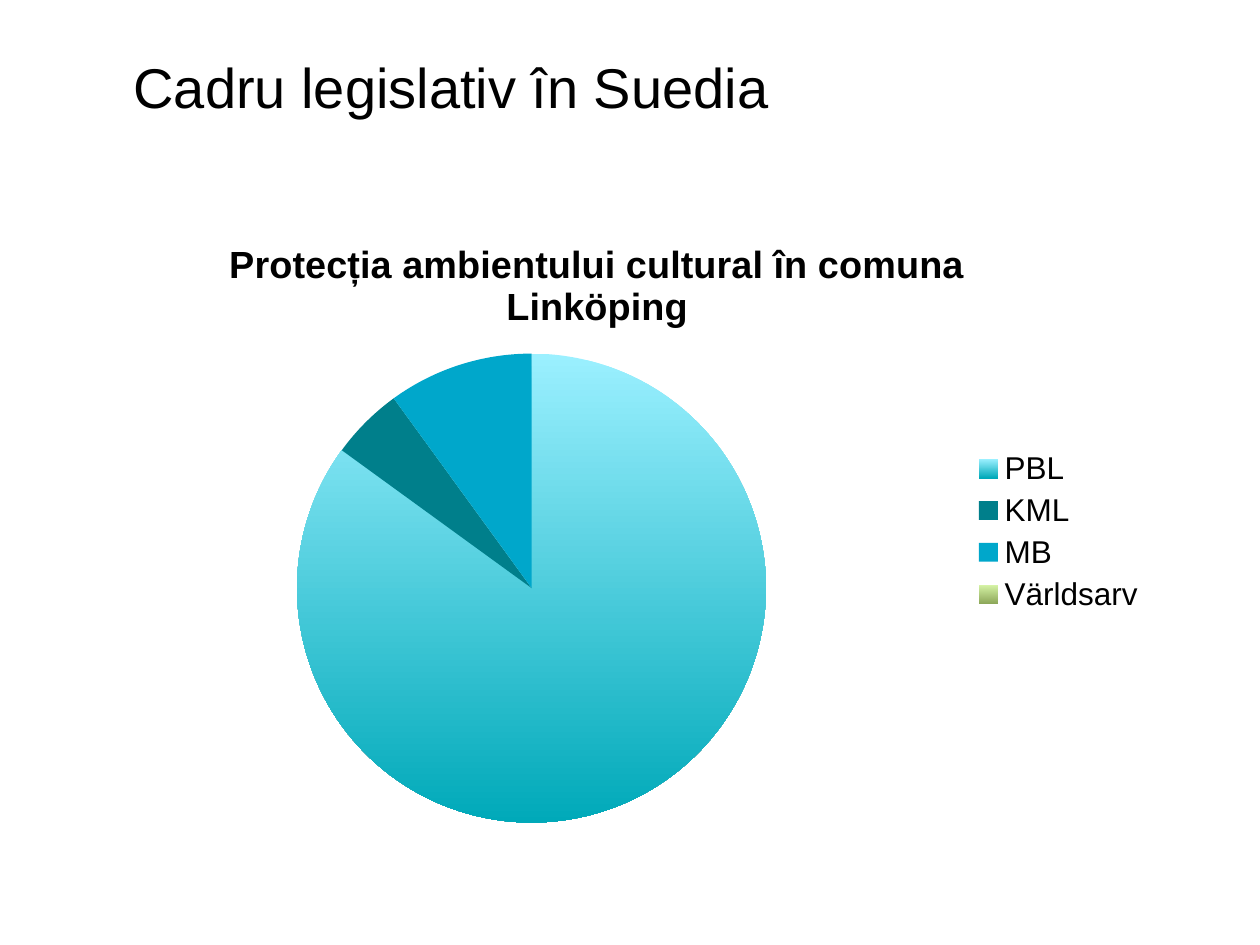
from lxml import etree
from pptx import Presentation
from pptx.chart.data import CategoryChartData as Data
from pptx.dml.color import RGBColor as RGB
from pptx.enum.chart import XL_CHART_TYPE as Kind, XL_LEGEND_POSITION as Side
from pptx.enum.text import MSO_ANCHOR as Anchor, PP_ALIGN as Align
from pptx.oxml.ns import qn
from pptx.util import Inches, Pt

BLACK = RGB(0, 0, 0)
ICE = RGB(0x9B, 0xF0, 0xFF)
AQUA = RGB(0x00, 0xA9, 0xB9)
TEAL = RGB(0x00, 0x7F, 0x8B)
BLUE = RGB(0x00, 0xA7, 0xCB)
LIME = RGB(0xD8, 0xF5, 0xA8)
MOSS = RGB(0x8D, 0xA8, 0x5A)


class Deck:
    face = "Arial"

    def __init__(self):
        self.prs = Presentation()
        self.prs.slide_width, self.prs.slide_height = Inches(10), Inches(7.5)
        self.slide = self.prs.slides.add_slide(self.prs.slide_layouts[5])

    def area(self, x, y, w, h):
        """Turn shares of the slide into lengths."""
        wide, high = self.prs.slide_width, self.prs.slide_height
        return int(x * wide), int(y * high), int(w * wide), int(h * high)

    def style(self, font, size, bold=False):
        font.name, font.size, font.bold = self.face, Pt(size), bold
        font.color.rgb = BLACK

    def title(self, text, box, size):
        shape = self.slide.shapes.title
        shape.left, shape.top, shape.width, shape.height = self.area(*box)
        frame = shape.text_frame
        frame.text = text
        frame.word_wrap, frame.vertical_anchor = True, Anchor.TOP
        frame.margin_left = frame.margin_right = 0
        frame.margin_top = frame.margin_bottom = 0
        frame.paragraphs[0].alignment = Align.LEFT
        self.style(frame.paragraphs[0].runs[0].font, size)

    def place(self, node, index, **spots):
        """Fix a chart part at shares of the chart's size."""
        for old in node.findall(qn("c:layout")):
            node.remove(old)
        layout = etree.Element(qn("c:layout"))
        manual = etree.SubElement(layout, qn("c:manualLayout"))
        if "w" in spots:
            etree.SubElement(manual, qn("c:layoutTarget")).set("val", "inner")
        for key in ("x", "y"):
            etree.SubElement(manual, qn(f"c:{key}Mode")).set("val", "edge")
        for key, share in spots.items():
            etree.SubElement(manual, qn(f"c:{key}")).set("val", str(share))
        node.insert(index, layout)

    def paint(self, fill, colors):
        if len(colors) == 1:
            fill.solid()
            fill.fore_color.rgb = colors[0]
            return
        fill.gradient()
        fill.gradient_angle = 270
        for stop, color in zip(fill.gradient_stops, colors):
            stop.color.rgb = color

    def pie(self, head, parts, box):
        data = Data()
        data.categories = [name for name, _, _ in parts]
        data.add_series("Series 1", [value for _, value, _ in parts])
        frame = self.slide.shapes.add_chart(Kind.PIE, *self.area(*box), data)
        chart = frame.chart
        self.style(chart.font, 18)

        # Heading
        chart.has_title = True
        text = chart.chart_title.text_frame
        text.text = head
        self.style(text.paragraphs[0].runs[0].font, 21.6, True)
        self.place(chart.chart_title._element, 1, x=0.12, y=0.02)

        # Legend
        chart.has_legend = True
        chart.legend.position = Side.RIGHT
        chart.legend.include_in_layout = False
        self.style(chart.legend.font, 18)
        self.place(chart.legend._element, 1, x=0.82, y=0.36)

        # Slices
        plot = chart.plots[0]
        plot.vary_by_categories = True
        self.place(chart._chartSpace.chart.plotArea, 0,
                   x=0.19, y=0.21, w=0.44, h=0.76)
        for i, (_, _, colors) in enumerate(parts):
            slot = plot.series[0].points[i].format
            self.paint(slot.fill, colors)
            slot.line.fill.background()


def main():
    deck = Deck()
    deck.title("Cadru legislativ în Suedia", (0.106, 0.056, 0.784, 0.167), 32)
    deck.pie("Protecția ambientului cultural în comuna Linköping",
             [("PBL", 85, [ICE, AQUA]), ("KML", 5, [TEAL]),
              ("MB", 10, [BLUE]), ("Världsarv", None, [LIME, MOSS])],
             (0.075, 0.233, 0.846, 0.66))
    deck.prs.save("out.pptx")


if __name__ == "__main__":
    main()
